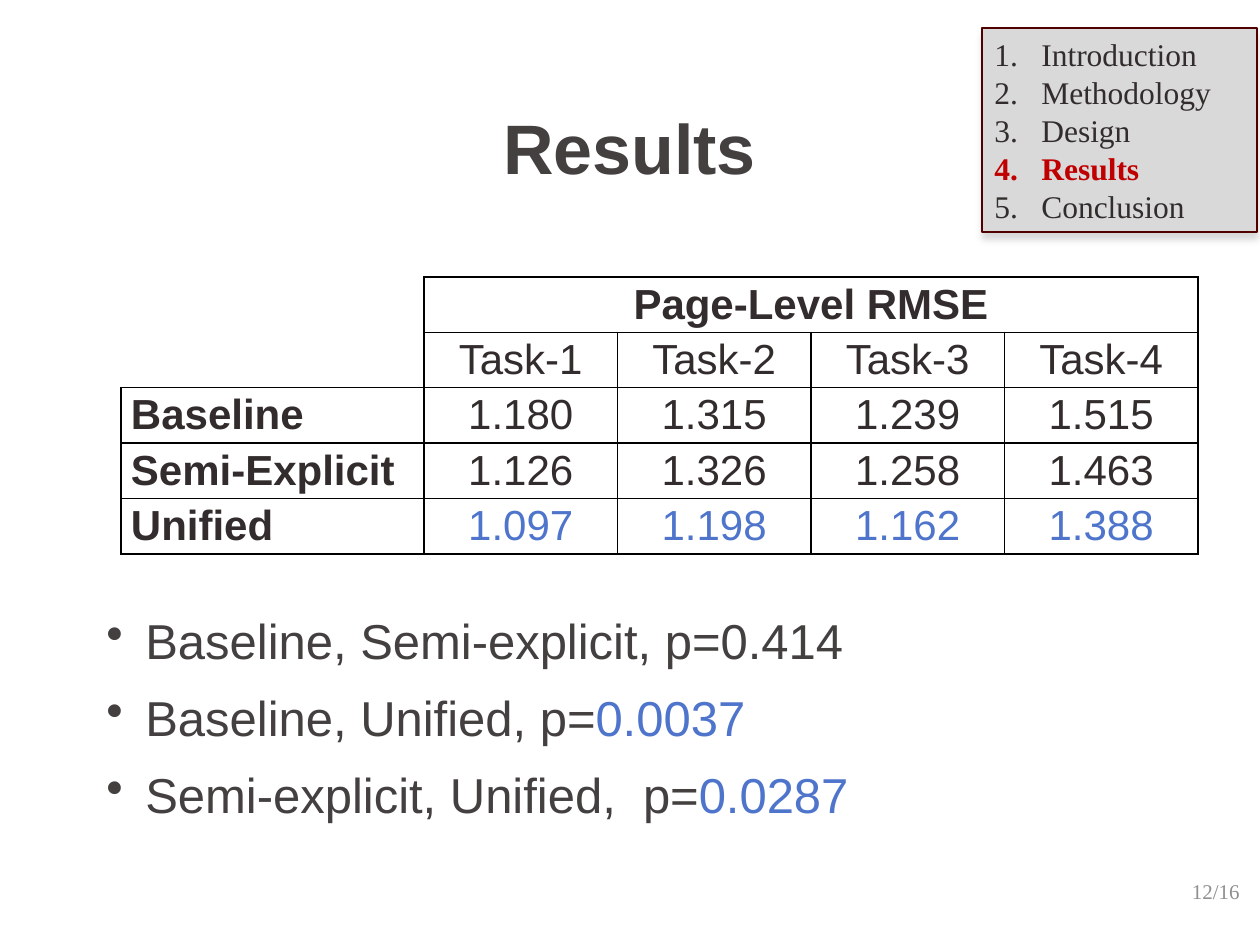
import pptx
import pptx.util
import pptx.dml.color
import pptx.enum.shapes
import pptx.enum.text
import pptx.oxml
import pptx.oxml.ns
from lxml import etree

PX = 914400 / 126
INK, GREY, BLUE, RED = "332C2C", "444040", "4E75CB", "C00000"
LEFT, MID, RIGHT = (pptx.enum.text.PP_ALIGN.LEFT,
                    pptx.enum.text.PP_ALIGN.CENTER,
                    pptx.enum.text.PP_ALIGN.RIGHT)
MIDDLE = pptx.enum.text.MSO_ANCHOR.MIDDLE
NS = pptx.oxml.ns.nsdecls("a")


def color(code):
    return pptx.dml.color.RGBColor.from_string(code)


def write(para, text, size=24, font="Arial", ink=INK, bold=False,
          align=LEFT, hang=0, mark=None):
    """Add a run to the paragraph; hang and mark make it a list item."""
    if mark:
        props = para._p.get_or_add_pPr()
        props.set("marL", str(round(hang * PX)))
        props.set("indent", str(round(-hang * PX)))
        props.append(pptx.oxml.parse_xml(mark))
    para.alignment = align
    run = para.add_run()
    run.text = text
    run.font.size = pptx.util.Pt(size)
    run.font.name = font
    run.font.bold = bold
    run.font.color.rgb = color(ink)


deck = pptx.Presentation()
deck.slide_width = round(1260 * PX)
deck.slide_height = round(945 * PX)
slide = deck.slides.add_slide(deck.slide_layouts[6])
shapes = slide.shapes

# Page number, title and list boxes
frames = []
for box in [(958, 877, 294, 29), (94, 67, 1071, 159), (94, 595, 1120, 242)]:
    frame = shapes.add_textbox(*[round(n * PX) for n in box]).text_frame
    frame.word_wrap = True
    frames.append(frame)
page, title, notes = frames

page.vertical_anchor = title.vertical_anchor = MIDDLE
write(page.paragraphs[0], "12/16", size=12, font="Times New Roman",
      ink="908F8F", align=RIGHT)
write(title.paragraphs[0], "Results", size=40, ink=GREY, bold=True, align=MID)

# Significance list
notes.margin_top = round(10 * PX)
dot = f'<a:buChar {NS} char="•"/>'
tests = [("Baseline, Semi-explicit, p=", "0.414", GREY),
         ("Baseline, Unified, p=", "0.0037", BLUE),
         ("Semi-explicit, Unified,  p=", "0.0287", BLUE)]
for i, (pair, value, ink) in enumerate(tests):
    para = notes.add_paragraph() if i else notes.paragraphs[0]
    write(para, pair, size=28, ink=GREY, hang=39, mark=dot)
    write(para, value, size=28, ink=ink)
    para.line_spacing = 1.1
    if i:
        para.space_before = pptx.util.Pt(7)

# Agenda
agenda = shapes.add_shape(pptx.enum.shapes.MSO_SHAPE.RECTANGLE,
                          *[round(n * PX) for n in (982, 28, 275, 204)])
agenda.fill.solid()
agenda.fill.fore_color.rgb = color("D9D9D9")
agenda.line.color.rgb = color("500000")
agenda.line.width = pptx.util.Pt(0.75)
agenda.shadow.inherit = False
effect = agenda._element.spPr.find(pptx.oxml.ns.qn("a:effectLst"))
effect.append(pptx.oxml.parse_xml(
    f'<a:outerShdw {NS} blurRad="50800" dist="50800" dir="5400000" '
    'algn="t" rotWithShape="0"><a:srgbClr val="D9D9D9"/></a:outerShdw>'))
frame = agenda.text_frame
frame.word_wrap = True
frame.auto_size = pptx.enum.text.MSO_AUTO_SIZE.SHAPE_TO_FIT_TEXT
count = f'<a:buAutoNum {NS} type="arabicPeriod"/>'
parts = ["Introduction", "Methodology", "Design", "Results", "Conclusion"]
for i, part in enumerate(parts):
    para = frame.paragraphs[0] if i == 0 else frame.add_paragraph()
    here = part == "Results"
    write(para, part, size=18, font="Times New Roman", bold=here,
          ink=RED if here else INK, hang=47, mark=count)

# Error table
rows = [["", "Page-Level RMSE", "", "", ""],
        ["", "Task-1", "Task-2", "Task-3", "Task-4"],
        ["Baseline", "1.180", "1.315", "1.239", "1.515"],
        ["Semi-Explicit", "1.126", "1.326", "1.258", "1.463"],
        ["Unified", "1.097", "1.198", "1.162", "1.388"]]
wide, first = 1077, 303
table = shapes.add_table(5, 5, *[round(n * PX)
                                 for n in (121, 277, wide, 277)]).table
table.first_row = table.horz_banding = False
for c, col in enumerate(table.columns):
    col.width = round((first if c == 0 else (wide - first) / 4) * PX)

for r, row in enumerate(rows):
    for c, text in enumerate(row):
        cell = table.cell(r, c)
        cell.fill.background()
        cell.vertical_anchor = MIDDLE
        cell.margin_left = cell.margin_right = round(10 * PX)
        cell.margin_top = cell.margin_bottom = round(2 * PX)
        corner = r < 2 and c == 0
        props = cell._tc.get_or_add_tcPr()
        for i, side in enumerate("LRTB"):
            bare = corner and (side in "LT" or (side == "B" and r == 0))
            paint = ("<a:noFill/>" if bare else
                     '<a:solidFill><a:srgbClr val="000000"/></a:solidFill>')
            props.insert(i, pptx.oxml.parse_xml(
                f'<a:ln{side} {NS} w="12700">{paint}</a:ln{side}>'))
        para = cell.text_frame.paragraphs[0]
        if text:
            write(para, text, bold=r == 0 or c == 0,
                  ink=BLUE if r == 4 and c else INK,
                  align=MID if c else LEFT)
        else:
            para.font.size = pptx.util.Pt(24)
table.cell(0, 0).merge(table.cell(1, 0))
table.cell(0, 1).merge(table.cell(0, 4))

deck.save("out.pptx")
